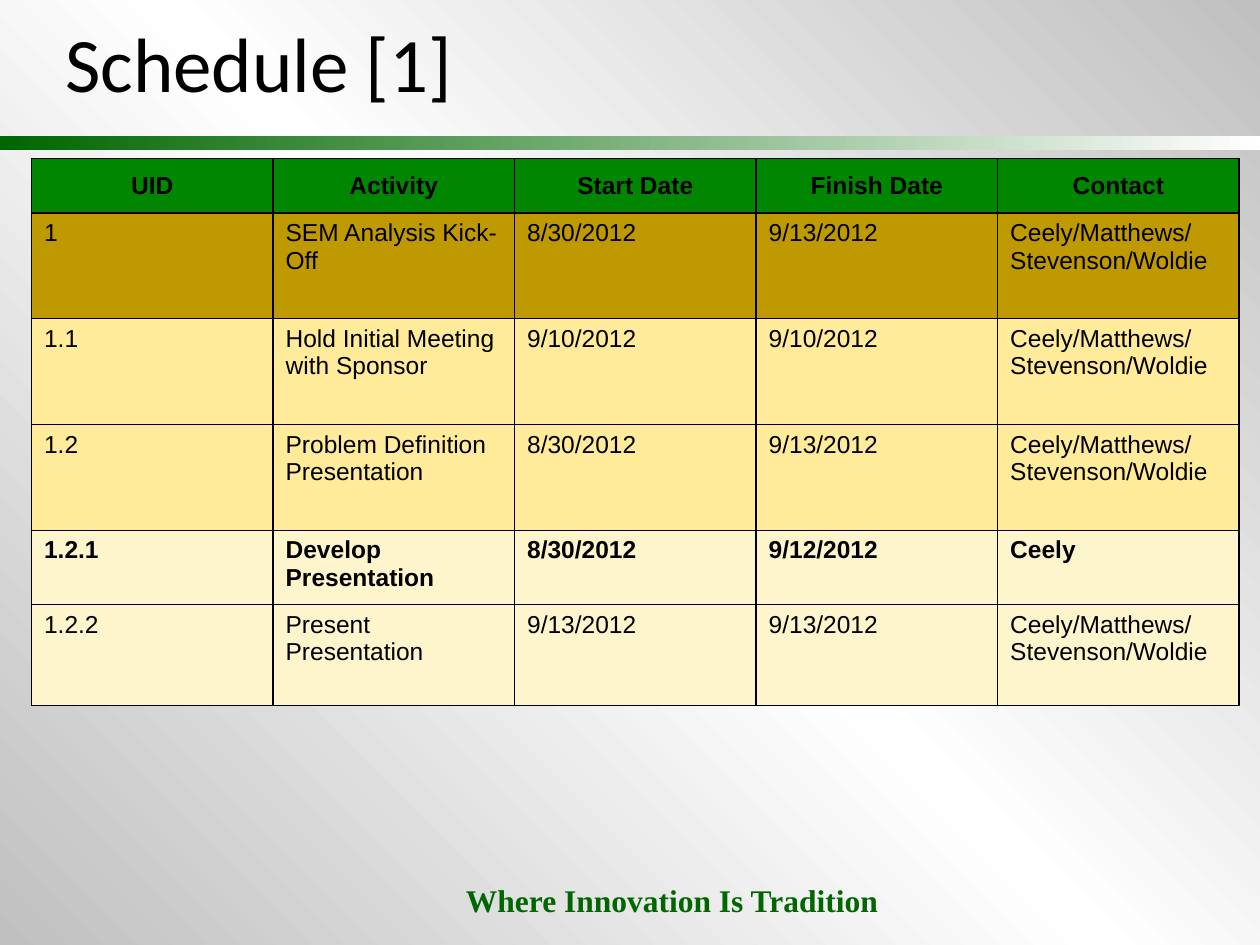
import copy

import pptx
import pptx.dml.color
import pptx.enum.shapes
import pptx.enum.text
import pptx.oxml
import pptx.oxml.ns
import pptx.util

Inches = pptx.util.Inches
Pt = pptx.util.Pt
ANCHOR = pptx.enum.text.MSO_ANCHOR
ALIGN = pptx.enum.text.PP_ALIGN

# Content
TITLE = "Schedule [1]"
MOTTO = "Where Innovation Is Tradition"
TEAM = "Ceely/Matthews/Stevenson/Woldie"
HEADINGS = ("UID", "Activity", "Start Date", "Finish Date", "Contact")
# (row height, fill, bold, cell texts)
SCHEDULE = [
    (0.43, "heading", True, HEADINGS),
    (0.84, "phase", False, ("1", "SEM Analysis Kick-Off", "8/30/2012", "9/13/2012", TEAM)),
    (0.84, "task", False, ("1.1", "Hold Initial Meeting with Sponsor", "9/10/2012", "9/10/2012", TEAM)),
    (0.84, "task", False, ("1.2", "Problem Definition Presentation", "8/30/2012", "9/13/2012", TEAM)),
    (0.59, "subtask", True, ("1.2.1", "Develop Presentation", "8/30/2012", "9/12/2012", "Ceely")),
    (0.8, "subtask", False, ("1.2.2", "Present Presentation", "9/13/2012", "9/13/2012", TEAM)),
]
COLORS = {
    "text": "000000", "green": "006600", "white": "FFFFFF", "silver": "C0C0C0",
    "heading": "008600", "phase": "BF9900", "task": "FFEB99", "subtask": "FFF5CC",
}
COLUMN_WIDTH = 1.917


def rgb(name):
    return pptx.dml.color.RGBColor.from_string(COLORS[name])


def style(paragraph, font_name, size, color="text", bold=False):
    font = paragraph.runs[0].font
    font.name, font.size, font.bold = font_name, Pt(size), bold
    font.color.rgb = rgb(color)


def add_text(slide, box, text, inset, anchor, **font):
    frame = slide.shapes.add_textbox(*map(Inches, box)).text_frame
    frame.word_wrap = True
    frame.vertical_anchor = anchor
    frame.margin_left = frame.margin_right = Inches(0.1)
    frame.margin_top = frame.margin_bottom = Inches(inset)
    frame.text = text
    style(frame.paragraphs[0], **font)


def set_gradient(fill, first, last, angle):
    fill.gradient()
    fill.gradient_angle = angle
    for stop, color, position in zip(fill.gradient_stops, (first, last), (0, 1)):
        stop.color.rgb = rgb(color)
        stop.position = position


def add_borders(cell):
    properties = cell._tc.get_or_add_tcPr()
    for side in ("lnL", "lnR", "lnT", "lnB"):
        properties.append(pptx.oxml.parse_xml(
            f'<a:{side} {pptx.oxml.ns.nsdecls("a")} w="12700"><a:solidFill>'
            f'<a:srgbClr val="{COLORS["text"]}"/></a:solidFill></a:{side}>'))


presentation = pptx.Presentation()
presentation.slide_width, presentation.slide_height = Inches(10), Inches(7.5)
slide = presentation.slides.add_slide(presentation.slide_layouts[6])

# Background: silver corners with a white diagonal
backdrop = slide.background.fill
set_gradient(backdrop, "silver", "silver", 45)
first_stop = slide._element.xpath(".//p:bg//a:gs")[0]
first_stop.addnext(copy.deepcopy(first_stop))
middle_stop = backdrop.gradient_stops[1]
middle_stop.color.rgb = rgb("white")
middle_stop.position = 0.5

# Green band under the title
band = slide.shapes.add_shape(pptx.enum.shapes.MSO_SHAPE.RECTANGLE,
                              Inches(0), Inches(1.08), Inches(10), Inches(0.11))
band.shadow.inherit = False
band.line.fill.background()
set_gradient(band.fill, "green", "white", 0)

# Motto
add_text(slide, (3.6, 6.94, 3.5, 0.4), MOTTO, 0.05, ANCHOR.TOP,
         font_name="Times New Roman", size=18, color="green", bold=True)

# Schedule table
table = slide.shapes.add_table(
    len(SCHEDULE), len(HEADINGS), Inches(0.25), Inches(1.26),
    Inches(COLUMN_WIDTH * len(HEADINGS)), Inches(sum(row[0] for row in SCHEDULE))).table
table.first_row = table.horz_banding = False
for column in table.columns:
    column.width = Inches(COLUMN_WIDTH)
for row, (height, fill, bold, texts) in zip(table.rows, SCHEDULE):
    row.height = Inches(height)
    for cell, text in zip(row.cells, texts):
        cell.text = text
        paragraph = cell.text_frame.paragraphs[0]
        style(paragraph, "Arial", 14, bold=bold)
        if fill == "heading":
            paragraph.alignment = ALIGN.CENTER
            cell.vertical_anchor = ANCHOR.MIDDLE
        add_borders(cell)
        cell.fill.solid()
        cell.fill.fore_color.rgb = rgb(fill)

# Title
add_text(slide, (0.42, -0.08, 8.92, 1.14), TITLE, 0.1, ANCHOR.MIDDLE,
         font_name="Calibri", size=44)

presentation.save("out.pptx")
